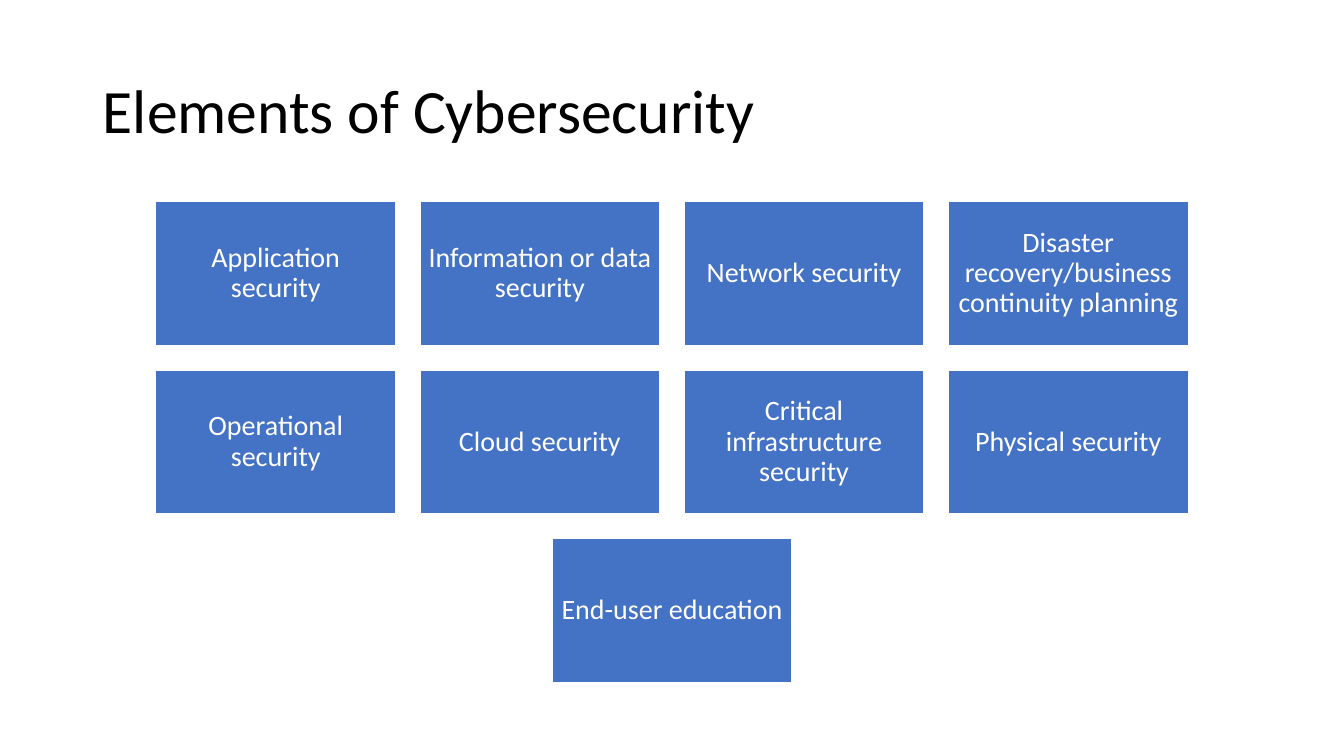
"""Build the slide that shows the elements of cybersecurity as rows of tiles."""
from dataclasses import dataclass

from pptx import Presentation
from pptx.dml.color import RGBColor as Color
from pptx.enum.shapes import MSO_SHAPE as Shape
from pptx.enum.text import MSO_ANCHOR as Anchor, MSO_AUTO_SIZE as AutoSize, PP_ALIGN as Align
from pptx.util import Inches, Pt


@dataclass(frozen=True)
class Theme:
    font: str = "Calibri"
    title_size: Pt = Pt(44)
    tile_size: Pt = Pt(20)
    black: Color = Color(0, 0, 0)
    white: Color = Color(255, 255, 255)
    blue: Color = Color(0x44, 0x72, 0xC4)


theme = Theme()


def style_text(frame, text, size, color, align):
    """Fill a text frame with one formatted paragraph."""
    frame.text = text
    frame.word_wrap = True
    frame.auto_size = AutoSize.NONE
    frame.vertical_anchor = Anchor.MIDDLE
    para = frame.paragraphs[0]
    para.alignment = align
    para.line_spacing = 0.9
    para.font.name = theme.font
    para.font.size = size
    para.font.color.rgb = color


ELEMENT_ROWS = [
    ["Application security", "Information or data security", "Network security",
     "Disaster recovery/business continuity planning"],
    ["Operational security", "Cloud security", "Critical infrastructure security",
     "Physical security"],
    ["End-user education"],
]
PAGE_WIDTH = Inches(13.33)
TILE_WIDTH, TILE_HEIGHT = Inches(2.38), Inches(1.43)
GAP = Inches(0.24)
TILES_TOP = Inches(2)
INSET = Inches(0.08)

deck = Presentation()
deck.slide_width, deck.slide_height = PAGE_WIDTH, Inches(7.5)
page = deck.slides.add_slide(deck.slide_layouts[5])

title = page.shapes.title
title.left, title.top = Inches(0.92), Inches(0.4)
title.width, title.height = Inches(11.5), Inches(1.45)
style_text(title.text_frame, "Elements of Cybersecurity", theme.title_size, theme.black, Align.LEFT)

for row, elements in enumerate(ELEMENT_ROWS):
    row_width = len(elements) * (TILE_WIDTH + GAP) - GAP
    row_left = (PAGE_WIDTH - row_width) // 2
    top = TILES_TOP + row * (TILE_HEIGHT + GAP)
    for column, element in enumerate(elements):
        left = row_left + column * (TILE_WIDTH + GAP)
        tile = page.shapes.add_shape(Shape.RECTANGLE, left, top, TILE_WIDTH, TILE_HEIGHT)
        tile.shadow.inherit = False
        tile.fill.solid()
        tile.fill.fore_color.rgb = theme.blue
        tile.line.color.rgb = theme.white
        tile.line.width = Pt(1)
        frame = tile.text_frame
        frame.margin_left = frame.margin_right = INSET
        frame.margin_top = frame.margin_bottom = INSET
        style_text(frame, element, theme.tile_size, theme.white, Align.CENTER)

deck.save("out.pptx")
